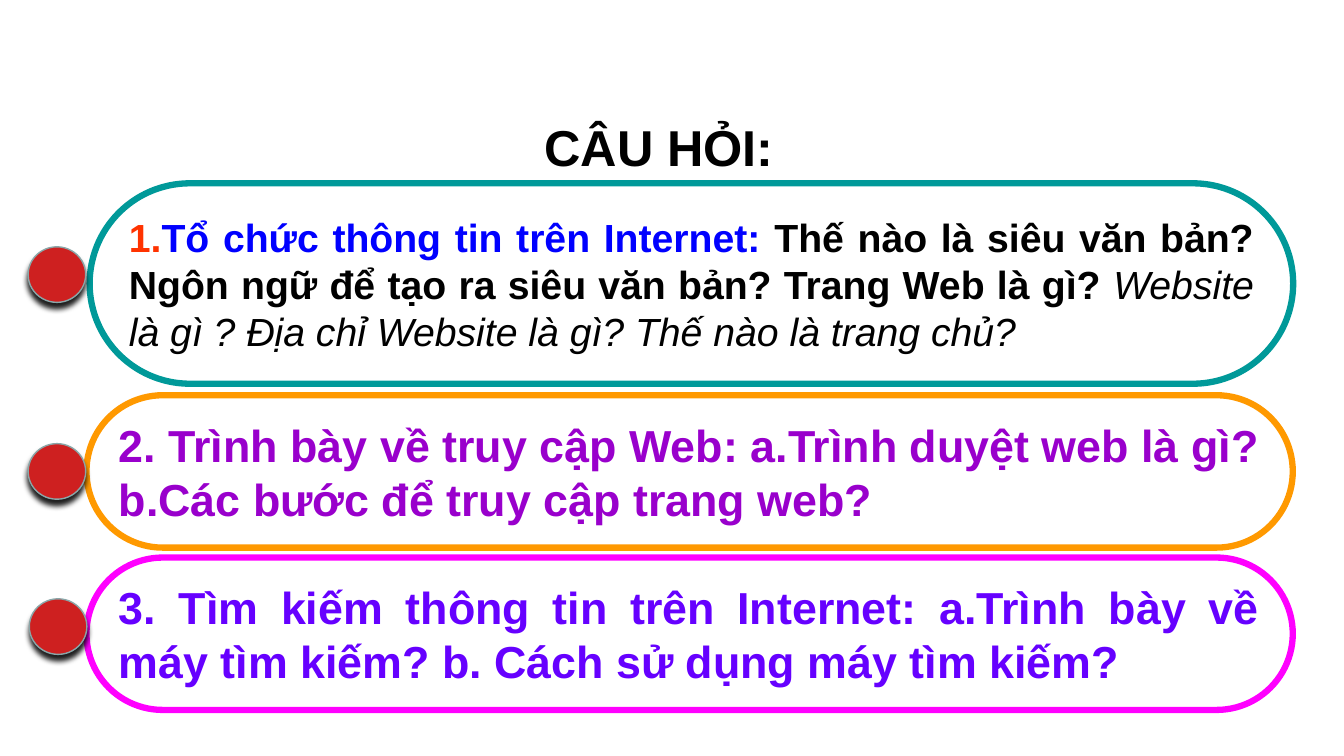
import pptx
import pptx.util
import pptx.oxml
import pptx.oxml.ns
import pptx.dml.color
import pptx.enum.shapes
import pptx.enum.text
from pptx.util import Cm

COLORS = {
    "black": "000000", "red": "FF3300", "blue": "0000FF",
    "purple": "9900CC", "violet": "6600FF", "teal": "009999",
    "orange": "FF9900", "magenta": "FF00FF",
    "bullet": "CE2020", "rim": "8AA6A8",
}
SHAPES = pptx.enum.shapes.MSO_SHAPE
ALIGN = pptx.enum.text.PP_ALIGN
ANCHOR = pptx.enum.text.MSO_ANCHOR


class QuestionSlide:
    font_name = "Arial"

    def __init__(self, presentation):
        self.slide = presentation.slides.add_slide(presentation.slide_layouts[5])

    def color(self, name):
        return pptx.dml.color.RGBColor.from_string(COLORS[name])

    def style(self, font, size, color=None):
        font.name = self.font_name
        font.size = pptx.util.Pt(size)
        font.bold = True
        if color:
            font.color.rgb = self.color(color)

    def title(self, text, left, top, width, height):
        shape = self.slide.shapes.title
        shape.left, shape.top = Cm(left), Cm(top)
        shape.width, shape.height = Cm(width), Cm(height)
        frame = shape.text_frame
        frame.text = text
        frame.vertical_anchor = ANCHOR.BOTTOM
        paragraph = frame.paragraphs[0]
        paragraph.alignment = ALIGN.CENTER
        self.style(paragraph.font, 36, "black")

    def outline(self, shape, color, width):
        shape.line.color.rgb = self.color(color)
        shape.line.width = pptx.util.Pt(width)

    def question(self, left, top, width, height, border, size, parts):
        shape = self.slide.shapes.add_shape(
            SHAPES.ROUNDED_RECTANGLE, Cm(left), Cm(top), Cm(width), Cm(height))
        shape.adjustments[0] = 0.5
        shape.shadow.inherit = False
        shape.fill.background()
        self.outline(shape, border, 4.5)
        frame = shape.text_frame
        frame.word_wrap = True
        frame.vertical_anchor = ANCHOR.MIDDLE
        frame.margin_top = frame.margin_bottom = 0
        paragraph = frame.paragraphs[0]
        paragraph.alignment = ALIGN.JUSTIFY
        self.style(paragraph.font, size)
        for text, color, italic in parts:
            run = paragraph.add_run()
            run.text = text
            run.font.color.rgb = self.color(color)
            if italic:
                run.font.bold = False
                run.font.italic = True

    def bullet(self, left, top):
        shape = self.slide.shapes.add_shape(
            SHAPES.OVAL, Cm(left), Cm(top), Cm(1.45), Cm(1.4))
        shape.fill.solid()
        shape.fill.fore_color.rgb = self.color("bullet")
        self.outline(shape, "rim", 1)
        shape._element.spPr.append(pptx.oxml.parse_xml(
            f'<a:effectLst {pptx.oxml.ns.nsdecls("a")}>'
            '<a:outerShdw blurRad="50800" dist="50800" dir="5400000">'
            f'<a:srgbClr val="{COLORS["black"]}"><a:alpha val="88000"/></a:srgbClr>'
            '</a:outerShdw></a:effectLst>'))


def main():
    presentation = pptx.Presentation()
    presentation.slide_width = Cm(33.87)
    presentation.slide_height = Cm(19.05)
    page = QuestionSlide(presentation)
    page.title("CÂU HỎI:", 11.43, 2.74, 10.36, 1.85)
    page.question(2.26, 4.62, 30.33, 5.05, "teal", 28, [
        ("1.", "red", False),
        ("Tổ chức thông tin trên Internet: ", "blue", False),
        ("Thế nào là siêu văn bản? Ngôn ngữ để tạo ra siêu văn bản? "
         "Trang Web là gì? ", "black", False),
        ("Website là gì ? Địa chỉ Website là gì? Thế nào là trang chủ?",
         "black", True),
    ])
    for top, border, color, text in (
        (9.96, "orange", "purple",
         "2. Trình bày về truy cập Web: a.Trình duyệt web là gì? "
         "b.Các bước để truy cập trang web?"),
        (14.05, "magenta", "violet",
         "3. Tìm kiếm thông tin trên Internet: a.Trình bày về "
         "máy tìm kiếm? b. Cách sử dụng máy tìm kiếm?"),
    ):
        page.question(2.18, top, 30.4, 3.84, border, 32, [(text, color, False)])
    for left, top in ((0.71, 6.22), (0.71, 11.18), (0.74, 15.09)):
        page.bullet(left, top)
    presentation.save("out.pptx")


if __name__ == "__main__":
    main()
